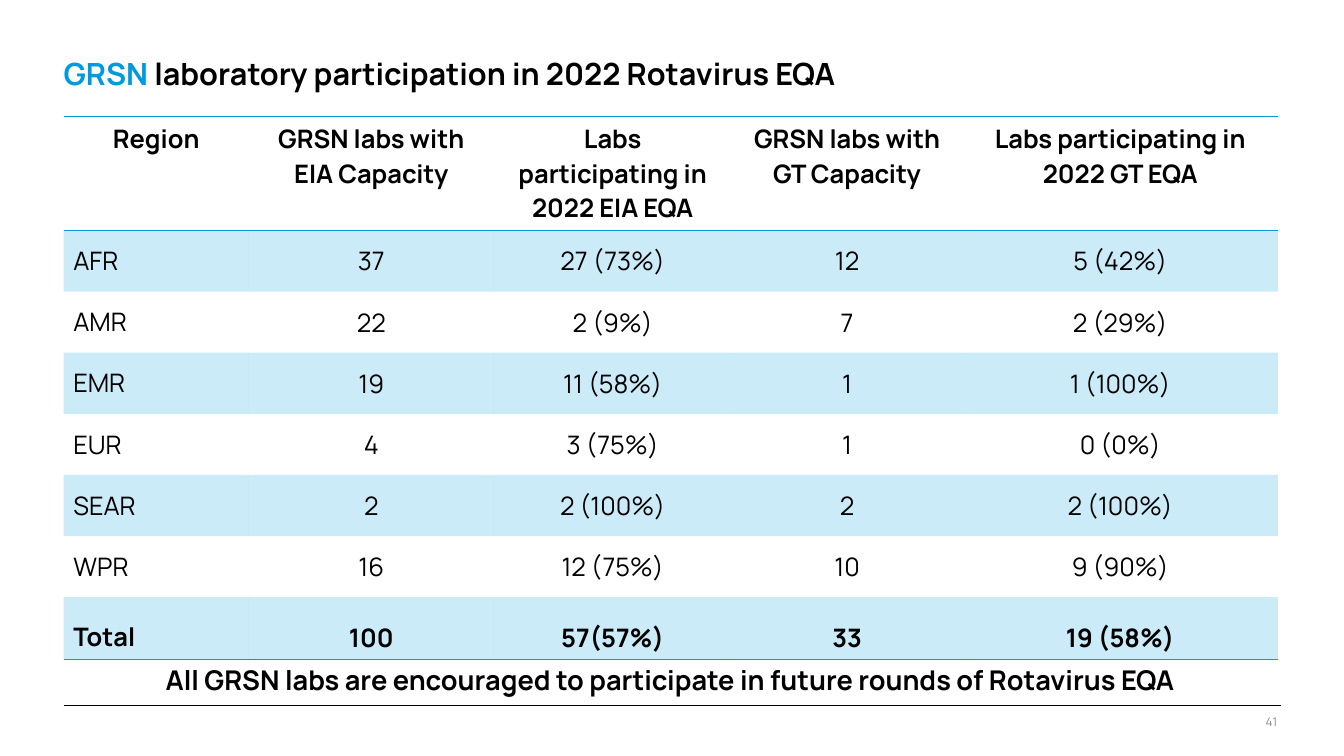
from dataclasses import dataclass

from lxml.etree import SubElement
from pptx import Presentation
from pptx.dml.color import RGBColor
from pptx.enum.shapes import MSO_CONNECTOR
from pptx.enum.text import MSO_ANCHOR as Anchor, PP_ALIGN as Align
from pptx.oxml.ns import qn
from pptx.slide import Slide
from pptx.table import _Cell as Cell
from pptx.text.text import _Paragraph as Paragraph
from pptx.util import Inches, Pt

FONT = "Manrope"
COLOURS = {"title": "009ADE", "table": "009CDE", "text": "000000", "number": "8C8C8C"}
NO_STYLE = "{2D5ABB26-0587-4C30-8999-92F81FD0307C}"
LEFT, WIDTH = 1.04, 19.86
COLUMN_WIDTHS = (3.03, 4.01, 3.89, 3.78, 5.16)
HEADER_HEIGHT, ROW_HEIGHT = 1.65, 1
ROWS = (
    ("Region", "GRSN labs with EIA Capacity", "Labs participating in 2022 EIA EQA",
     "GRSN labs with GT Capacity", "Labs participating in 2022 GT EQA"),
    ("AFR", "37", "27 (73%)", "12", "5 (42%)"),
    ("AMR", "22", "2 (9%)", "7", "2 (29%)"),
    ("EMR", "19", "11 (58%)", "1", "1 (100%)"),
    ("EUR", "4", "3 (75%)", "1", "0 (0%)"),
    ("SEAR", "2", "2 (100%)", "2", "2 (100%)"),
    ("WPR", "16", "12 (75%)", "10", "9 (90%)"),
    ("Total", "100", "57(57%)", "33", "19 (58%)"),
)


@dataclass(frozen=True)
class Span:
    text: str
    size: float
    colour: str = "text"
    bold: bool = False


@dataclass(frozen=True)
class TextBox:
    left: float
    top: float
    width: float
    height: float
    spans: tuple[Span, ...]
    align: Align = Align.LEFT
    line_spacing: float = 1.0
    margins: tuple[float, float] = (0, 0)


TEXT_BOXES = (
    TextBox(LEFT, 0.97, 20.35, 0.55,
            (Span("GRSN", 36, "title", True),
             Span(" laboratory participation in 2022 Rotavirus EQA", 36, bold=True)),
            line_spacing=0.9),
    TextBox(LEFT, 10.8, WIDTH, 0.64,
            (Span("All GRSN labs are encouraged to participate in future rounds of Rotavirus EQA",
                  32, bold=True),),
            Align.CENTER, margins=(0.1, 0.05)),
    TextBox(19.28, 11.69, 1.62, 0.24, (Span("41", 14, "number"),), Align.RIGHT),
)


def colour(name: str) -> RGBColor:
    return RGBColor.from_string(COLOURS[name])


def add_span(para: Paragraph, span: Span) -> None:
    run = para.add_run()
    run.text = span.text
    run.font.name = FONT
    run.font.size = Pt(span.size)
    run.font.bold = span.bold
    run.font.color.rgb = colour(span.colour)


def add_text_box(page: Slide, item: TextBox) -> None:
    box = page.shapes.add_textbox(Inches(item.left), Inches(item.top),
                                  Inches(item.width), Inches(item.height))
    frame = box.text_frame
    frame.word_wrap = True
    side, end = item.margins
    frame.margin_left = frame.margin_right = Inches(side)
    frame.margin_top = frame.margin_bottom = Inches(end)
    para = frame.paragraphs[0]
    para.alignment = item.align
    para.line_spacing = item.line_spacing
    for span in item.spans:
        add_span(para, span)


def add_border(cell: Cell, tag: str) -> None:
    """Draw one edge of a cell; call it before the cell is filled."""
    line = SubElement(cell._tc.get_or_add_tcPr(), qn(tag), w=str(Pt(1)))
    fill = SubElement(line, qn("a:solidFill"))
    SubElement(fill, qn("a:srgbClr"), val=COLOURS["table"])


def fill_cell(cell: Cell, shaded: bool) -> None:
    if not shaded:
        cell.fill.background()
        return
    cell.fill.solid()
    cell.fill.fore_color.rgb = colour("table")
    tint = cell._tc.tcPr.find(qn("a:solidFill")).find(qn("a:srgbClr"))
    SubElement(tint, qn("a:alpha"), val="20000")


def format_cell(cell: Cell, text: str, row: int, column: int) -> None:
    header, total = row == 0, row == len(ROWS) - 1
    tight = row > 1 and column > 0
    cell.margin_left = cell.margin_right = Inches(0.02 if tight else 0.16)
    cell.margin_top = Inches(0.02 if tight else 0.08)
    cell.margin_bottom = Inches(0 if tight else 0.08)
    cell.vertical_anchor = Anchor.TOP if header else Anchor.MIDDLE
    if header:
        add_border(cell, "a:lnT")
    if header or total:
        add_border(cell, "a:lnB")
    fill_cell(cell, shaded=row % 2 == 1)
    para = cell.text_frame.paragraphs[0]
    para.alignment = Align.CENTER if header or column else Align.LEFT
    if total:
        para.line_spacing = 1.5
    add_span(para, Span(text, 30, bold=header or total))


def add_participation_table(page: Slide) -> None:
    height = HEADER_HEIGHT + ROW_HEIGHT * (len(ROWS) - 1)
    frame = page.shapes.add_table(len(ROWS), len(COLUMN_WIDTHS), Inches(LEFT), Inches(1.9),
                                  Inches(WIDTH), Inches(height))
    table = frame.table
    table.first_row = table.horz_banding = False
    table._tbl.tblPr.find(qn("a:tableStyleId")).text = NO_STYLE
    for column, width in zip(table.columns, COLUMN_WIDTHS):
        column.width = Inches(width)
    for r, texts in enumerate(ROWS):
        table.rows[r].height = Inches(ROW_HEIGHT if r else HEADER_HEIGHT)
        for c, text in enumerate(texts):
            format_cell(table.cell(r, c), text, r, c)


def add_footer_line(page: Slide) -> None:
    line = page.shapes.add_connector(MSO_CONNECTOR.STRAIGHT, Inches(LEFT), Inches(11.54),
                                     Inches(20.96), Inches(11.54))
    line.line.color.rgb = colour("text")
    line.line.width = Pt(0.75)
    SubElement(line._element.spPr, qn("a:effectLst"))


def main() -> None:
    deck = Presentation()
    deck.slide_width, deck.slide_height = Inches(21.99), Inches(12.37)
    page = deck.slides.add_slide(deck.slide_layouts[6])
    add_footer_line(page)
    add_participation_table(page)
    for item in TEXT_BOXES:
        add_text_box(page, item)
    deck.save("out.pptx")


if __name__ == "__main__":
    main()
